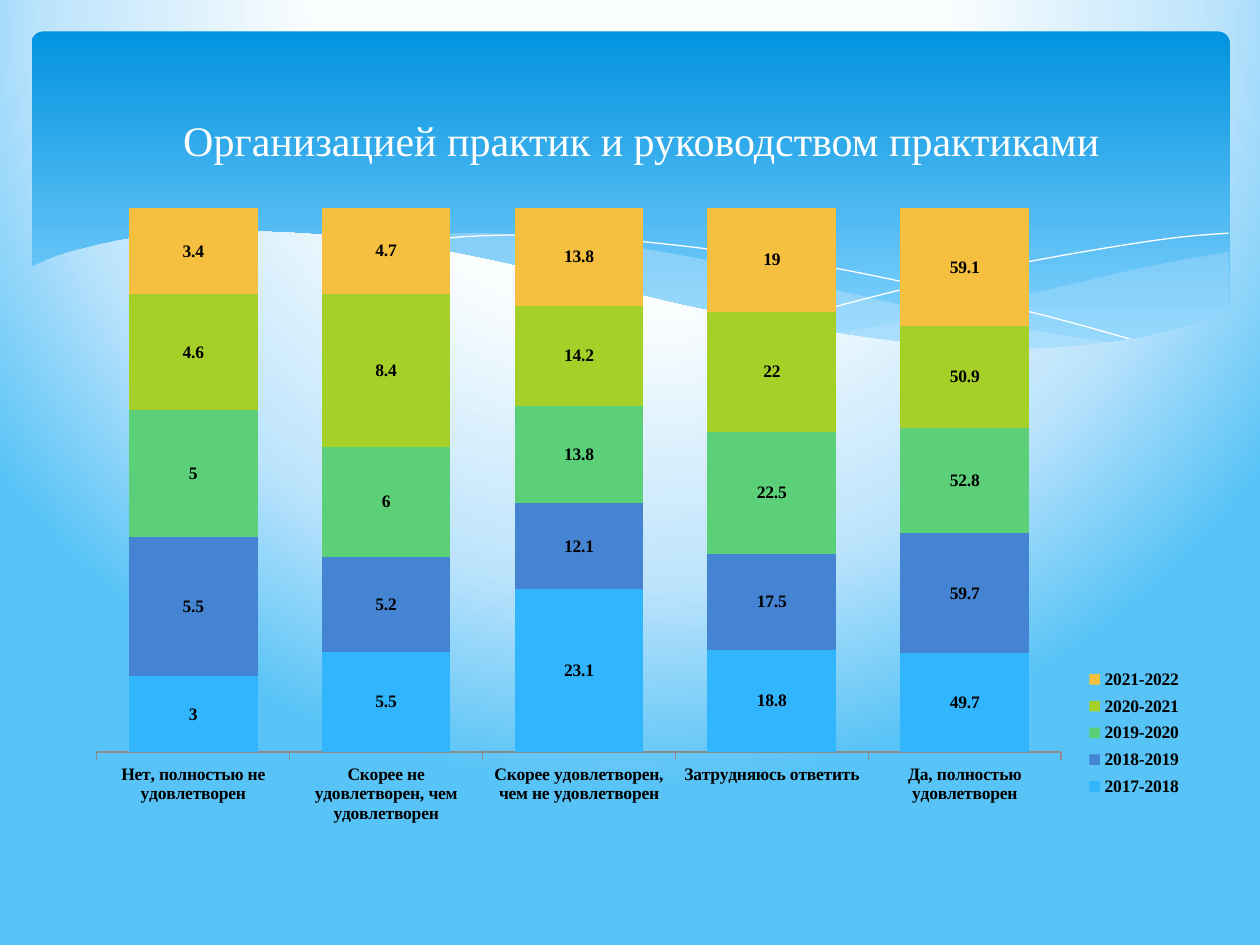
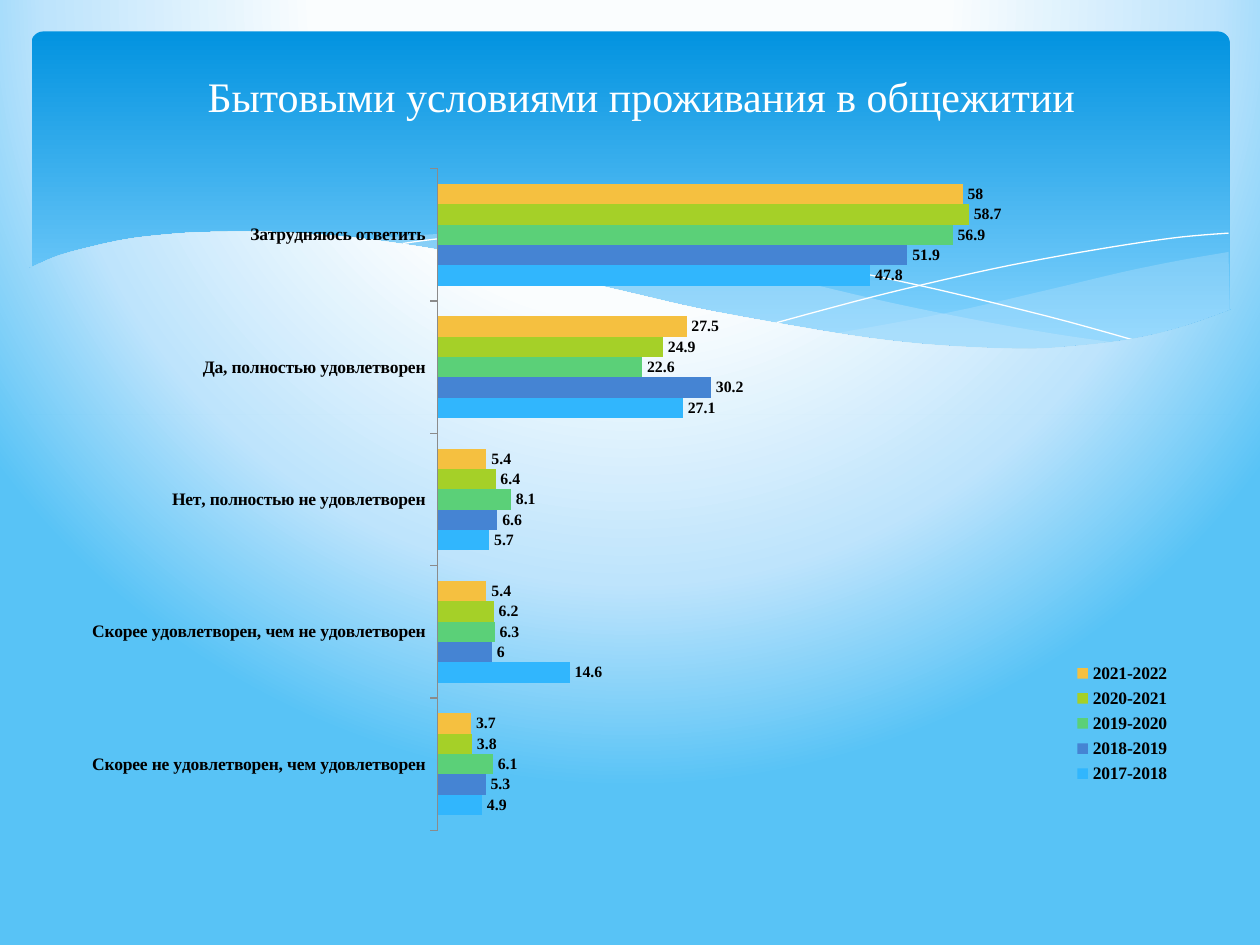
from pptx import Presentation
from pptx.chart.data import CategoryChartData as ChartData
from pptx.dml.color import RGBColor as RGB
from pptx.enum.chart import XL_CHART_TYPE as ChartKind
from pptx.enum.chart import XL_LABEL_POSITION as LabelAt
from pptx.enum.chart import XL_LEGEND_POSITION as LegendAt
from pptx.enum.chart import XL_TICK_MARK as Tick
from pptx.enum.shapes import MSO_SHAPE as Preset
from pptx.enum.text import MSO_ANCHOR as Anchor
from pptx.enum.text import PP_ALIGN as Align
from pptx.oxml import parse_xml
from pptx.oxml.ns import nsdecls, qn
from pptx.util import Pt

WHITE = RGB(0xFF, 0xFF, 0xFF)
BLACK = RGB(0, 0, 0)
AXIS_GREY = RGB(0x8B, 0x8B, 0x8B)
PALE_BLUE = RGB(0xC6, 0xE7, 0xFC)
BAND_TOP = RGB(0x02, 0x93, 0xE0)
BAND_BOTTOM = RGB(0x83, 0xD3, 0xFE)
GLOW_STOPS = [(40, RGB(0xFA, 0xFD, 0xFE)), (74, RGB(0xBE, 0xE4, 0xFC)),
              (100, RGB(0x58, 0xC3, 0xF6))]
YEAR_COLORS = {
    "2017-2018": RGB(0x31, 0xB6, 0xFD),
    "2018-2019": RGB(0x45, 0x84, 0xD3),
    "2019-2020": RGB(0x5B, 0xD0, 0x78),
    "2020-2021": RGB(0xA5, 0xD0, 0x28),
    "2021-2022": RGB(0xF5, 0xC0, 0x40),
}
FONT = "Times New Roman"
CHART_FONT = "Cabin"

# Gradient directions
DOWN = '<a:lin ang="5400000" scaled="0"/>'
FROM_TOP = ('<a:path path="circle"><a:fillToRect l="20000" t="-40000" '
            'r="20000" b="140000"/></a:path>')

# Knots of the header curves, in points
RIGHT_TOP = [(702, 144), (673.2, 149), (641.5, 155.5), (599, 165.6),
             (542.2, 178.6), (475.9, 190.8)]
RIGHT_BOTTOM = [(475.9, 190.8), (507.6, 195.1), (545, 198.7), (578.2, 200.2),
                (607.7, 199.4), (640.1, 195.8), (668.2, 189.4), (702.7, 177.8)]
MIDDLE_TOP = [(643, 196.6), (602.6, 190.8), (558, 182.9), (508.3, 172.8),
              (452.9, 159.8), (409.7, 149.8), (370.1, 142.6), (334.8, 137.5),
              (302.4, 134.6), (273.6, 133.2), (247.7, 133.9), (225.4, 135.4),
              (205.9, 137.5)]
MIDDLE_BOTTOM = [(205.9, 137.5), (246.2, 143.3), (290.9, 151.9), (323.3, 159.8),
                 (381.6, 172.8), (432.7, 183.6), (478.8, 191.5), (519.8, 197.3),
                 (556.6, 199.4), (589, 200.2), (617, 199.4), (643, 196.6)]
FALLING_LINE = [(222.5, 140.4), (247.7, 136.8), (278.6, 134.6), (311.8, 134.6),
                (352.1, 136.8), (400.3, 141.8), (457.9, 149.8), (523.4, 162.7),
                (598.3, 180.7), (653, 195.8)]
RISING_LINE = [(441.4, 185), (500.4, 169.2), (558.7, 155.5), (601.9, 146.9),
               (644.4, 139.7), (675.4, 135.4), (702, 133.2)]
WAVE_CREST = [(703.4, 177.1), (676.8, 186.5), (647.3, 193.7), (612, 198),
              (582.5, 199.4), (535.7, 197.3), (495.4, 193), (450.7, 185.8),
              (399.6, 176.4), (362.2, 167.8), (321.8, 158.4), (281.5, 149),
              (244.8, 141.8), (210.2, 136.8), (180, 133.9), (151.9, 132.5),
              (127.4, 132.5), (105.1, 133.2), (76.3, 136.1), (54.7, 140.4),
              (33.1, 146.2), (16.6, 153.4)]
WAVE_BASE = [(16.6, 236.9), (703.4, 236.9)]


def smooth(knots, steps=5):
    """Points of a Catmull-Rom curve through the knots."""
    padded = [knots[0], *knots, knots[-1]]
    curve = [knots[0]]
    for a, b, c, d in zip(padded, padded[1:], padded[2:], padded[3:]):
        for step in range(1, steps + 1):
            t = step / steps
            curve.append(tuple(
                (2 * q + (r - p) * t + (2 * p - 5 * q + 4 * r - s) * t ** 2
                 + (3 * q - p - 3 * r + s) * t ** 3) / 2
                for p, q, r, s in zip(a, b, c, d)))
    return curve


def set_gradient(fill, owner, stops, direction):
    fill.gradient()
    gradient = owner.find(".//" + qn("a:gradFill"))
    marks = "".join(f'<a:gs pos="{at * 1000}"><a:srgbClr val="{color}"/></a:gs>'
                    for at, color in stops)
    gradient.getparent().replace(gradient, parse_xml(
        f'<a:gradFill {nsdecls("a")} rotWithShape="1">'
        f'<a:gsLst>{marks}</a:gsLst>{direction}</a:gradFill>'))


def set_font(font, size, color, bold=False, name=FONT):
    font.name, font.size, font.bold = name, Pt(size), bold
    font.color.rgb = color


def place(part, x, y, w, h, inner=False):
    """Fix the place of a plot or legend as fractions of the chart."""
    for old in part.findall(qn("c:layout")):
        part.remove(old)
    target = '<c:layoutTarget val="inner"/>' if inner else ""
    layout = parse_xml(
        f'<c:layout {nsdecls("c")}><c:manualLayout>{target}'
        f'<c:xMode val="edge"/><c:yMode val="edge"/><c:x val="{x}"/>'
        f'<c:y val="{y}"/><c:w val="{w}"/><c:h val="{h}"/>'
        '</c:manualLayout></c:layout>')
    part.insert(0 if inner else 1, layout)


class SurveyDeck:
    def __init__(self):
        self.deck = Presentation()
        self.deck.slide_width, self.deck.slide_height = Pt(720), Pt(540)
        self.slide = None

    def new_slide(self, title, top, height):
        self.slide = self.deck.slides.add_slide(self.deck.slide_layouts[6])
        set_gradient(self.slide.background.fill, self.slide.element,
                     GLOW_STOPS, FROM_TOP)
        self.header()
        self.title(title, top, height)

    def header(self):
        band = self.slide.shapes.add_shape(
            Preset.ROUNDED_RECTANGLE, Pt(18), Pt(18), Pt(684.7), Pt(194.4))
        band.adjustments[0] = 0.034
        band.shadow.inherit = False
        band.line.fill.background()
        set_gradient(band.fill, band.element,
                     [(0, BAND_TOP), (90, BAND_BOTTOM)], DOWN)
        self.veil(smooth(RIGHT_TOP) + smooth(RIGHT_BOTTOM), 29)
        self.veil(smooth(MIDDLE_TOP) + smooth(MIDDLE_BOTTOM), 40)
        self.hairline(smooth(FALLING_LINE))
        self.hairline(smooth(RISING_LINE))
        self.wave(smooth(WAVE_CREST) + WAVE_BASE)

    def outline(self, points, close=True):
        start, *rest = [(Pt(x), Pt(y)) for x, y in points]
        builder = self.slide.shapes.build_freeform(*start)
        builder.add_line_segments(rest, close=close)
        figure = builder.convert_to_shape()
        figure.shadow.inherit = False
        figure.line.fill.background()
        return figure

    def veil(self, points, opacity):
        veil = self.outline(points)
        veil.fill.solid()
        veil.fill.fore_color.rgb = PALE_BLUE
        tint = veil.element.spPr.find(qn("a:solidFill"))[0]
        tint.append(parse_xml(
            f'<a:alpha {nsdecls("a")} val="{opacity * 1000}"/>'))

    def hairline(self, points):
        curve = self.outline(points, close=False)
        curve.fill.background()
        curve.line.color.rgb = WHITE
        curve.line.width = Pt(0)

    def wave(self, points):
        # The wave shows the slide background through the band
        self.outline(points).element.set("useBgFill", "1")

    def title(self, text, top, height):
        box = self.slide.shapes.add_textbox(Pt(24.5), Pt(top), Pt(684), Pt(height))
        frame = box.text_frame
        frame.word_wrap = True
        frame.vertical_anchor = Anchor.MIDDLE
        heading = frame.paragraphs[0]
        heading.text = text
        heading.alignment = Align.CENTER
        set_font(heading.font, 24, WHITE)

    def chart(self, kind, box, answers, shares, gap, overlap, label_size,
              label_at, plot_area, legend_area, top_value=None):
        survey = ChartData()
        survey.categories = answers
        for year, values in zip(YEAR_COLORS, shares):
            survey.add_series(year, values)
        chart = self.slide.shapes.add_chart(kind, *map(Pt, box), survey).chart
        chart.has_title = False
        set_font(chart.font, 10, BLACK, name=CHART_FONT)

        # Bars and their values
        plot = chart.plots[0]
        plot.vary_by_categories = False
        plot.gap_width, plot.overlap = gap, overlap
        for bars, color in zip(plot.series, YEAR_COLORS.values()):
            bars.format.fill.solid()
            bars.format.fill.fore_color.rgb = color
            labels = bars.data_labels
            labels.show_value = True
            labels.position = label_at
            set_font(labels.font, label_size, BLACK, bold=True)

        # Axes
        answer_axis, share_axis = chart.category_axis, chart.value_axis
        answer_axis.major_tick_mark = Tick.OUTSIDE
        answer_axis.minor_tick_mark = Tick.NONE
        answer_axis.format.line.color.rgb = AXIS_GREY
        set_font(answer_axis.tick_labels.font, 10, BLACK, bold=True)
        share_axis.has_major_gridlines = False
        share_axis.visible = False
        if top_value:
            share_axis.minimum_scale, share_axis.maximum_scale = 0, top_value

        # Legend
        chart.has_legend = True
        legend = chart.legend
        legend.position = LegendAt.RIGHT
        legend.include_in_layout = False
        set_font(legend.font, 10, BLACK, bold=True)
        root = chart.element
        place(root.find(".//" + qn("c:plotArea")), *plot_area, inner=True)
        place(root.find(".//" + qn("c:legend")), *legend_area)


YES = "Да, полностью удовлетворен"
RATHER_YES = "Скорее удовлетворен, чем не удовлетворен"
UNSURE = "Затрудняюсь ответить"
RATHER_NO = "Скорее не удовлетворен, чем удовлетворен"
NO = "Нет, полностью не удовлетворен"


def main():
    survey = SurveyDeck()

    # Practical training
    survey.new_slide("Организацией практик и руководством практиками", 31.7, 96.5)
    survey.chart(
        ChartKind.COLUMN_STACKED_100, (42.5, 111.6, 640.8, 365.8),
        [NO, RATHER_NO, RATHER_YES, UNSURE, YES],
        [(3, 5.5, 23.1, 18.8, 49.7),
         (5.5, 5.2, 12.1, 17.5, 59.7),
         (5, 6, 13.8, 22.5, 52.8),
         (4.6, 8.4, 14.2, 22, 50.9),
         (3.4, 4.7, 13.8, 19, 59.1)],
        gap=50, overlap=100, label_size=10, label_at=LabelAt.CENTER,
        plot_area=(0.02, 0.02, 0.86, 0.85), legend_area=(0.9, 0.73, 0.09, 0.22))

    # Dormitory
    survey.new_slide("Бытовыми условиями проживания в общежитии", 20.9, 67.7)
    survey.chart(
        ChartKind.BAR_CLUSTERED, (36.7, 88.6, 646.6, 393.8),
        [RATHER_NO, RATHER_YES, NO, YES, UNSURE],
        [(4.9, 14.6, 5.7, 27.1, 47.8),
         (5.3, 6, 6.6, 30.2, 51.9),
         (6.1, 6.3, 8.1, 22.6, 56.9),
         (3.8, 6.2, 6.4, 24.9, 58.7),
         (3.7, 5.4, 5.4, 27.5, 58)],
        gap=150, overlap=0, label_size=9, label_at=LabelAt.OUTSIDE_END,
        plot_area=(0.33, 0.02, 0.56, 0.96), legend_area=(0.89, 0.73, 0.09, 0.19),
        top_value=70)

    survey.deck.save("out.pptx")


if __name__ == "__main__":
    main()
